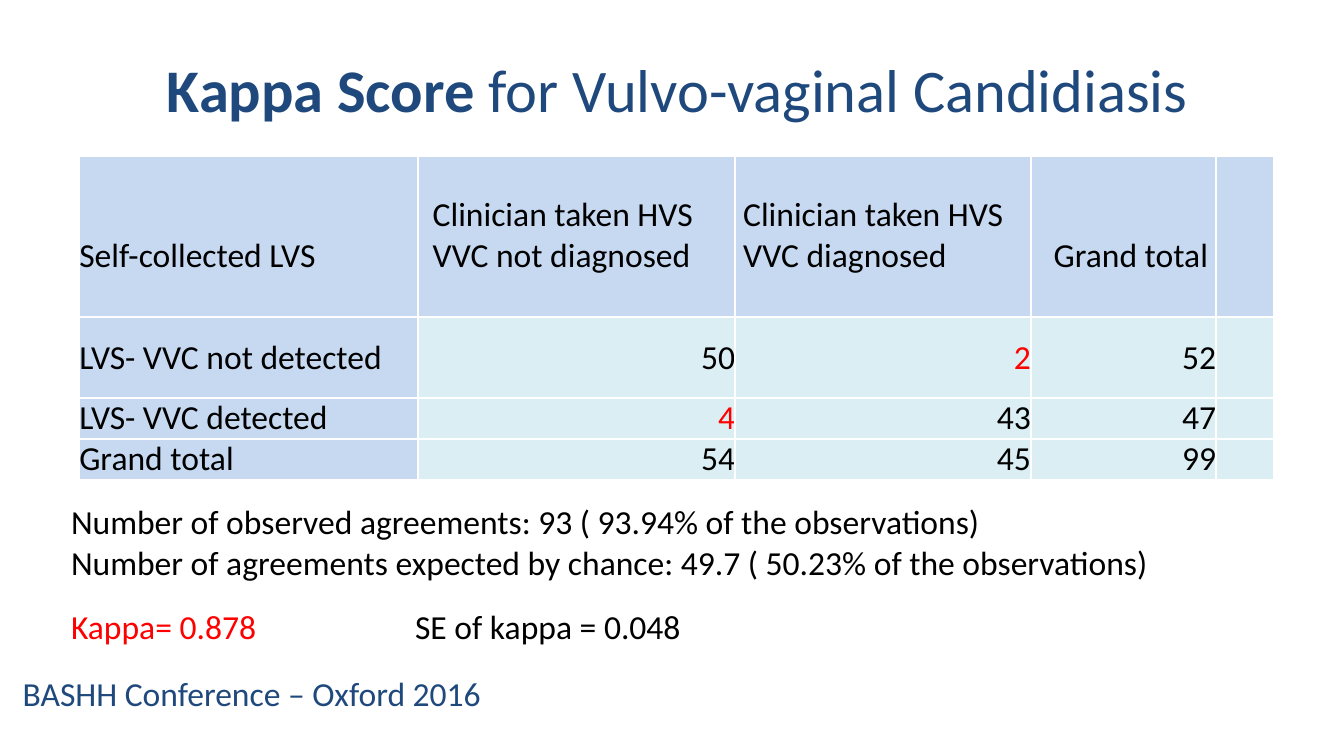
from pptx import Presentation
from pptx.dml.color import RGBColor
from pptx.enum.text import MSO_ANCHOR, PP_ALIGN
from pptx.oxml.ns import qn
from pptx.util import Inches, Pt
from lxml.etree import SubElement

# Content: runs are (text, colour name, bold)
TITLE = [("Kappa Score ", "navy", True), ("for Vulvo-vaginal Candidiasis", "navy", False)]
HEADERS = ["Self-collected LVS", "Clinician taken HVS\nVVC not diagnosed",
           "Clinician taken HVS\nVVC diagnosed", "Grand total", ""]
COUNTS = [("LVS- VVC not detected", 50, 2, 52, ""),
          ("LVS- VVC detected", 4, 43, 47, ""),
          ("Grand total", 54, 45, 99, "")]
DISAGREEMENTS = {(1, 2), (2, 1)}
AGREEMENT = [("Number of observed agreements: 93 ( 93.94% of the observations)\v"
              "Number of agreements expected by chance: 49.7 ( 50.23% of the observations)",
              "black", False)]
KAPPA = [("Kappa= 0.878", "red", False), ("\tSE of kappa = 0.048", "black", False)]
CONFERENCE = [("BASHH Conference – Oxford 2016", "navy", False)]

# Theme and grid, in inches and points
THEME = {"font": "Calibri", "title": 32.4, "body": 18, "navy": "1F497D", "black": "000000",
         "red": "FF0000", "header": "C6D9F1", "count": "DBEEF4", "border": "FFFFFF"}
SLIDE_WIDTH = Inches(10)
SLIDE_HEIGHT = SLIDE_WIDTH * 9 // 16
COLUMNS = [2.52, 2.36, 2.2, 1.38, 0.43]
ROWS = [1.2, 0.6, 0.3, 0.3]
HEADER_INDENTS = [0, 0.11, 0.06, 0.17, 0]
HEADER_BOTTOM = 0.3
KAPPA_GAP, KAPPA_TAB = 13, 2.56


def color(name):
    return RGBColor.from_string(THEME[name])


def apply(target, values):
    for key, value in values.items():
        setattr(target, key, value)


def write(paragraph, runs, size="body"):
    for text, tint, bold in runs:
        # A vertical tab in the content marks a line break
        for index, line in enumerate(text.split("\v")):
            if index:
                paragraph.add_line_break()
            run = paragraph.add_run()
            run.text = line
            apply(run.font, {"name": THEME["font"], "size": Pt(THEME[size]), "bold": bold})
            run.font.color.rgb = color(tint)


def add_text(slide, *box):
    frame = slide.shapes.add_textbox(*map(Inches, box)).text_frame
    frame.word_wrap = True
    return frame


def add_borders(cell):
    properties = cell._tc.get_or_add_tcPr()
    for side in ("a:lnL", "a:lnR", "a:lnT", "a:lnB"):
        line = SubElement(properties, qn(side), w=str(Pt(1)))
        SubElement(SubElement(line, qn("a:solidFill")), qn("a:srgbClr"), val=THEME["border"])


def fill_cell(cell, row, column, value):
    header = row == 0
    apply(cell, {"margin_left": Inches(HEADER_INDENTS[column] if header else 0),
                 "margin_right": 0, "margin_top": 0,
                 "margin_bottom": Inches(HEADER_BOTTOM if header else 0),
                 "vertical_anchor": MSO_ANCHOR.BOTTOM if header else MSO_ANCHOR.MIDDLE})
    add_borders(cell)
    cell.fill.solid()
    cell.fill.fore_color.rgb = color("header" if header or column == 0 else "count")
    tint = "red" if (row, column) in DISAGREEMENTS else "black"
    frame = cell.text_frame
    for index, line in enumerate(str(value).split("\n")):
        paragraph = frame.add_paragraph() if index else frame.paragraphs[0]
        paragraph.alignment = PP_ALIGN.RIGHT if row and column else PP_ALIGN.LEFT
        if line:
            write(paragraph, [(line, tint, False)])


def main():
    presentation = Presentation()
    apply(presentation, {"slide_width": SLIDE_WIDTH, "slide_height": SLIDE_HEIGHT})
    slide = presentation.slides.add_slide(presentation.slide_layouts[5])

    # Title
    title = slide.shapes.title
    apply(title, dict(zip(("left", "top", "width", "height"),
                          map(Inches, (0.54, 0.39, 9, 0.94)))))
    apply(title.text_frame, {"vertical_anchor": MSO_ANCHOR.TOP, "margin_top": 0,
                             "word_wrap": True})
    heading = title.text_frame.paragraphs[0]
    heading.alignment = PP_ALIGN.CENTER
    write(heading, TITLE, "title")

    # Agreement table
    grid = [HEADERS, *COUNTS]
    table = slide.shapes.add_table(len(ROWS), len(COLUMNS), Inches(0.59), Inches(1.16),
                                   Inches(sum(COLUMNS)), Inches(sum(ROWS))).table
    apply(table, {"first_row": False, "horz_banding": False})
    for column, width in zip(table.columns, COLUMNS):
        column.width = Inches(width)
    for row, height in zip(table.rows, ROWS):
        row.height = Inches(height)
    for row, values in enumerate(grid):
        for column, value in enumerate(values):
            fill_cell(table.cell(row, column), row, column, value)

    # Kappa statistics
    statistics = add_text(slide, 0.43, 3.68, 9.21, 1.53)
    write(statistics.paragraphs[0], AGREEMENT)
    kappa = statistics.add_paragraph()
    kappa.space_before = Pt(KAPPA_GAP)
    tabs = SubElement(kappa._p.get_or_add_pPr(), qn("a:tabLst"))
    SubElement(tabs, qn("a:tab"), pos=str(Inches(KAPPA_TAB)), algn="l")
    write(kappa, KAPPA)

    # Conference line
    write(add_text(slide, 0.07, 4.96, 4.78, 0.69).paragraphs[0], CONFERENCE)

    presentation.save("out.pptx")


if __name__ == "__main__":
    main()
